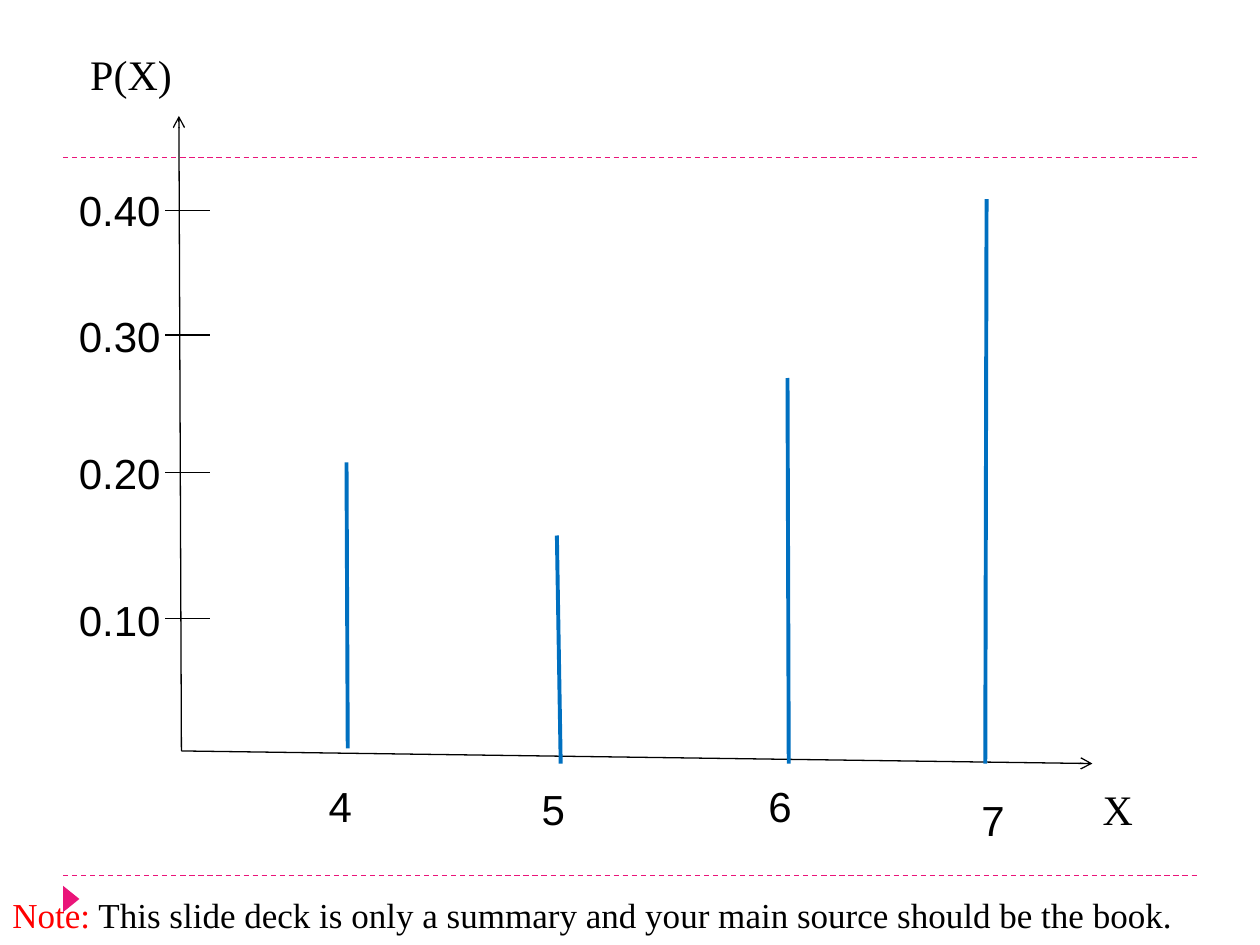
from lxml.etree import SubElement
from pptx import Presentation
from pptx.dml.color import RGBColor
from pptx.enum.dml import MSO_LINE
from pptx.enum.shapes import MSO_CONNECTOR, MSO_SHAPE
from pptx.enum.text import MSO_ANCHOR, PP_ALIGN
from pptx.oxml.ns import qn
from pptx.util import Inches, Pt

INK = {"pink": "EA157A", "black": "000000", "white": "FFFFFF",
       "blue": "0070C0", "red": "FF0000"}
COLS, ROWS = 10, 7.5
SERIF = "Times New Roman"


class Board:
    """Draws on one slide, measured in columns and rows of a one-inch grid."""

    def __init__(self):
        self.deck = Presentation()
        self.deck.slide_width = Inches(COLS)
        self.deck.slide_height = Inches(ROWS)
        self.slide = self.deck.slides.add_slide(self.deck.slide_layouts[6])
        self.shapes = self.slide.shapes

    def color(self, name):
        return RGBColor.from_string(INK[name])

    def style(self, run, size, ink="black", face=SERIF):
        run.font.size = Pt(size)
        run.font.name = face
        run.font.color.rgb = self.color(ink)

    def line(self, start, end, ink="black", width=0.75, dash=False, arrow=False):
        line = self.shapes.add_connector(
            MSO_CONNECTOR.STRAIGHT, *map(Inches, (*start, *end)))
        line.line.color.rgb = self.color(ink)
        line.line.width = Pt(width)
        if dash:
            line.line.dash_style = MSO_LINE.DASH
        props = line._element.spPr
        if arrow:
            SubElement(props.find(qn("a:ln")), qn("a:tailEnd"), type="arrow")
        SubElement(props, qn("a:effectLst"))

    def shape(self, kind, box, fill):
        shape = self.shapes.add_shape(kind, *map(Inches, box))
        shape.shadow.inherit = False
        shape.fill.solid()
        shape.fill.fore_color.rgb = self.color(fill)
        return shape

    def mark(self, box):
        mark = self.shape(MSO_SHAPE.ISOSCELES_TRIANGLE, box, "pink")
        mark.line.fill.background()
        mark.rotation = 90

    def label(self, text, left, top, face=SERIF):
        """Right-to-left label; its digits take the complex-script font."""
        label = self.shape(MSO_SHAPE.RECTANGLE, (left, top, 1.08, 0.67), "white")
        label.line.color.rgb = self.color("white")
        label.line.width = Pt(1.5)
        frame = label.text_frame
        frame.text = text
        frame.vertical_anchor = MSO_ANCHOR.MIDDLE
        para = frame.paragraphs[0]
        para.alignment = PP_ALIGN.CENTER
        para._p.get_or_add_pPr().set("rtl", "1")
        run = para.runs[0]
        self.style(run, 24, face=face)
        SubElement(run._r.rPr, qn("a:cs"), typeface="Arial")

    def note(self, box, parts):
        frame = self.shapes.add_textbox(*map(Inches, box)).text_frame
        frame.word_wrap = True
        for text, ink in parts:
            run = frame.paragraphs[0].add_run()
            run.text = text
            self.style(run, 20, ink)


def main():
    board = Board()
    for row in (6.95, 1.25):
        board.line((0.5, row), (9.5, row), "pink", dash=True)
    board.mark((0.46, 7.07, 0.21, 0.13))

    # Probability scale: text, tick row, label row
    for text, row, top in (("0.40", 1.67, 1.33), ("0.30", 2.66, 2.33),
                           ("0.20", 3.75, 3.42), ("0.10", 4.91, 4.58)):
        board.label(text, 0.41, top)
        board.line((1.31, row), (1.67, row))
    board.label("P(X)", 0.5, 0.25)
    board.label("X", 8.33, 6.08)

    # Values of X: text, label place, face
    for text, left, top, face in (("4", 2.16, 6.06, "Calibri"),
                                  ("5", 3.85, 6.08, SERIF),
                                  ("6", 5.65, 6.06, SERIF),
                                  ("7", 7.34, 6.17, SERIF)):
        board.label(text, left, top, face)

    zero = (1.44, 5.96)
    for end in ((8.67, 6.06), (1.42, 0.92)):
        board.line(zero, end, arrow=True)
    for foot, peak in (((2.76, 5.94), (2.75, 3.67)),
                       ((4.45, 6.06), (4.42, 4.25)),
                       ((6.26, 6.06), (6.25, 3)),
                       ((7.82, 6.06), (7.83, 1.58))):
        board.line(foot, peak, "blue", 2.25)

    board.note((0, 7.04, 9.75, 0.44), (
        ("Note:", "red"),
        (" This slide deck is only a summary and your main source "
         "should be the book.", "black")))
    board.deck.save("out.pptx")


if __name__ == "__main__":
    main()
